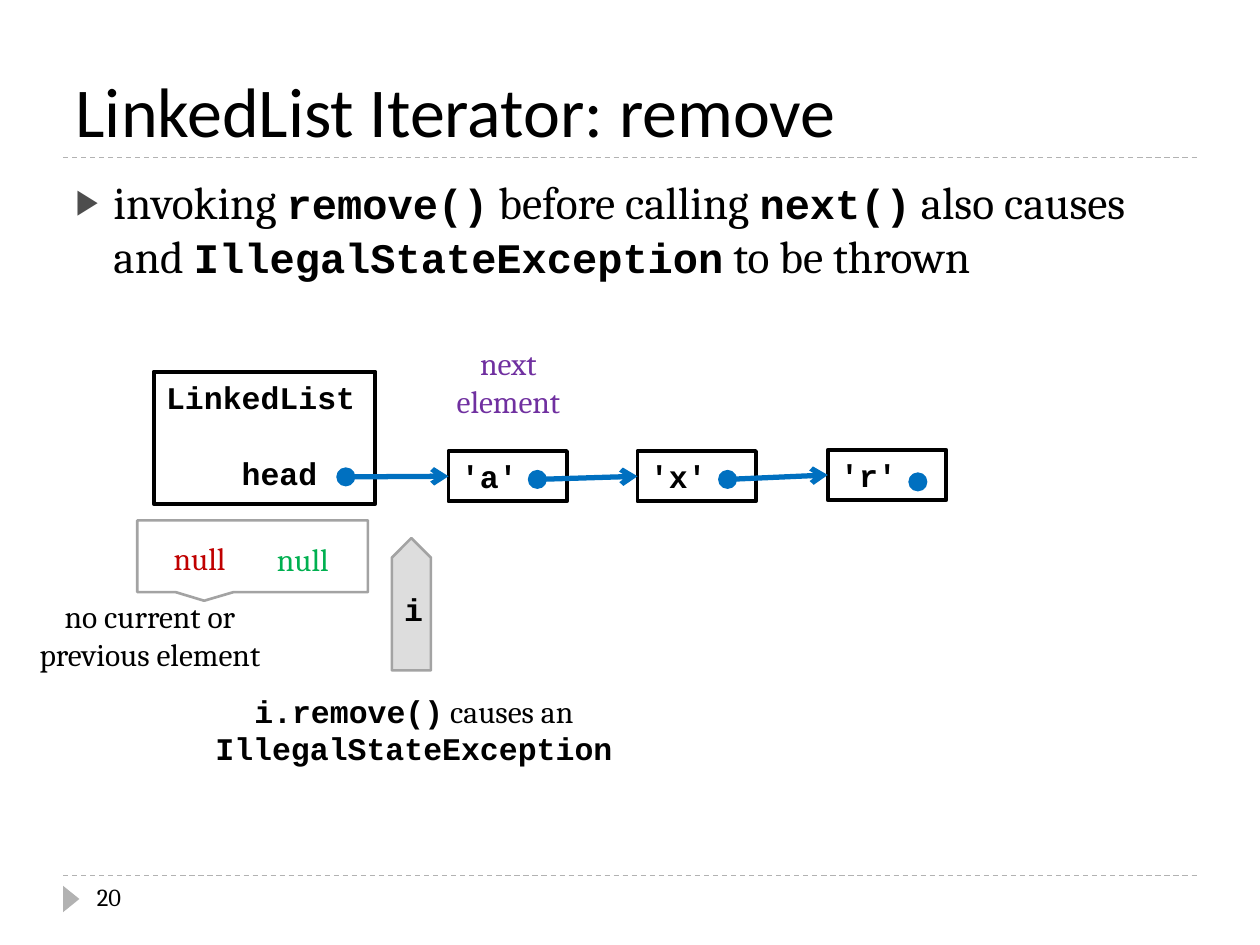
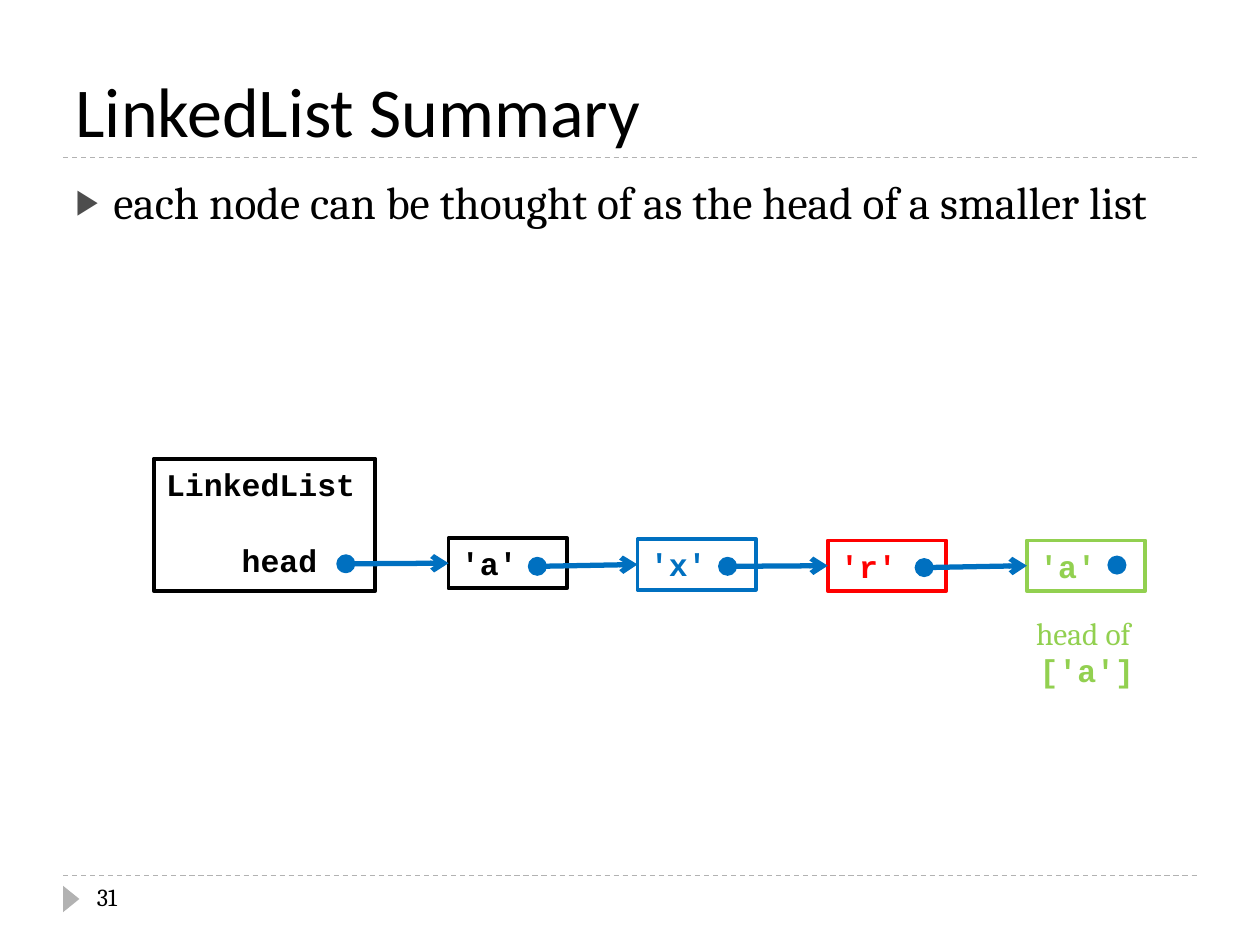
from lxml import etree
from pptx import Presentation
from pptx.dml.color import RGBColor
from pptx.enum.dml import MSO_LINE
from pptx.enum.shapes import MSO_CONNECTOR, MSO_SHAPE
from pptx.enum.text import MSO_ANCHOR, PP_ALIGN
from pptx.oxml.ns import qn
from pptx.util import Inches, Pt

RECT, OVAL, TRIANGLE = MSO_SHAPE.RECTANGLE, MSO_SHAPE.OVAL, MSO_SHAPE.ISOSCELES_TRIANGLE
CALLOUT, POINTER = MSO_SHAPE.RECTANGULAR_CALLOUT, MSO_SHAPE.PENTAGON
STRAIGHT, DASH = MSO_CONNECTOR.STRAIGHT, MSO_LINE.DASH
LEFT, CENTER = PP_ALIGN.LEFT, PP_ALIGN.CENTER
TOP, MIDDLE, BOTTOM = MSO_ANCHOR.TOP, MSO_ANCHOR.MIDDLE, MSO_ANCHOR.BOTTOM

BLACK, WHITE, BLUE, RED, GREEN = "000000", "FFFFFF", "0070C0", "FF0000", "92D050"
RULE, BULLET, EDGE, SHADE = "B2B2B2", "4D4D4D", "A3A3A3", "DDDDDD"

TITLE = {"name": "Calibri", "size": Pt(40), "bold": False}
BODY = {"name": "Cambria", "size": Pt(26), "bold": False}
BODY_CODE = {"name": "Courier New", "size": Pt(24), "bold": True}
NOTE = {"name": "Cambria", "size": Pt(18), "bold": False}
CODE = {"name": "Courier New", "size": Pt(18), "bold": True}
NUMBER = {"name": "Cambria", "size": Pt(14), "bold": False}
DOT = 0.13


def paint(fill, colour):
    if colour is None:
        fill.background()
    else:
        fill.solid()
        fill.fore_color.rgb = RGBColor.from_string(colour)


def write(frame, lines, colour, align=LEFT, anchor=TOP, wrap=True):
    frame.word_wrap = wrap
    frame.vertical_anchor = anchor
    for index, spans in enumerate(lines):
        para = frame.add_paragraph() if index else frame.paragraphs[0]
        para.alignment = align
        for text, style in spans:
            span = para.add_run()
            span.text = text
            for name, value in style.items():
                setattr(span.font, name, value)
            paint(span.font.fill, colour)


pages = [
    {
        "title": "LinkedList Iterator: remove",
        "number": "20",
        "bullet": [
            ("invoking ", BODY), ("remove()", BODY_CODE),
            (" before calling ", BODY), ("next()", BODY_CODE),
            (" also causes and ", BODY), ("IllegalStateException", BODY_CODE),
            (" to be thrown", BODY),
        ],
        "list_top": 2.95,
        "nodes": [
            ("'a'", 3.56, 3.58, BLACK, 4.2, 3.74),
            ("'x'", 5.06, 3.58, BLACK, 5.71, 3.74),
            ("'r'", 6.57, 3.57, BLACK, 7.22, 3.76),
        ],
        "iterator": True,
        "captions": [
            (3.49, 2.68, 1.09, 0.71, "7030A0", CENTER, [[("next", NOTE)], [("element", NOTE)]]),
            (1.6, 5.44, 3.37, 0.71, BLACK, CENTER,
             [[("i.remove()", CODE), (" causes an", NOTE)], [("IllegalStateException", CODE)]]),
            (2.1, 4.24, 0.63, 0.4, "00B050", LEFT, [[("null", NOTE)]]),
            (1.28, 4.23, 0.63, 0.4, "C00000", LEFT, [[("null", NOTE)]]),
            (0.15, 4.69, 2.08, 0.71, BLACK, CENTER,
             [[("no current or", NOTE)], [("previous element", NOTE)]]),
        ],
    },
    {
        "title": "LinkedList Summary",
        "number": "31",
        "bullet": [("each node can be thought of as the head of a smaller list", BODY)],
        "list_top": 3.64,
        "nodes": [
            ("'a'", 3.56, 4.27, BLACK, 4.2, 4.43),
            ("'x'", 5.06, 4.28, BLUE, 5.71, 4.43),
            ("'r'", 6.57, 4.29, RED, 7.27, 4.44),
            ("'a'", 8.15, 4.29, GREEN, 8.8, 4.42),
        ],
        "iterator": False,
        "captions": [
            (8.09, 4.82, 1.07, 0.71, GREEN, CENTER, [[("head of ", NOTE)], [("['a'] ", CODE)]]),
        ],
    },
]

deck = Presentation()
deck.slide_width, deck.slide_height = Inches(10), Inches(7.5)

for content in pages:
    page = deck.slides.add_slide(deck.slide_layouts[1])
    title, body = page.placeholders[0], page.placeholders[1]
    for holder, top, height in ((title, 0.17, 1.08), (body, 1.33, 5.4)):
        holder.left, holder.top = Inches(0.5), Inches(top)
        holder.width, holder.height = Inches(9), Inches(height)
    write(title.text_frame, [[(content["title"], TITLE)]], BLACK, anchor=BOTTOM)
    write(body.text_frame, [content["bullet"]], BLACK)
    para = body.text_frame.paragraphs[0]
    para.space_before = Pt(6)
    props = para._p.get_or_add_pPr()
    props.set("marL", str(Inches(0.3)))
    props.set("indent", str(Inches(-0.3)))
    bullet_colour = etree.SubElement(props, qn("a:buClr"))
    etree.SubElement(bullet_colour, qn("a:srgbClr"), val=BULLET)
    etree.SubElement(props, qn("a:buSzPct"), val="76000")
    etree.SubElement(props, qn("a:buChar"), char="▶")

    list_top = content["list_top"]
    shapes = [(TRIANGLE, 0.46, 7.07, 0.21, DOT, RULE, None, 0, 90, [])]
    if content["iterator"]:
        shapes += [
            (CALLOUT, 1.09, 4.13, 1.83, 0.57, WHITE, EDGE, 1.5, 0, []),
            (POINTER, 2.74, 4.64, 1.05, 0.31, SHADE, EDGE, 1.5, 270, [[("i", CODE)]]),
        ]
    shapes.append((RECT, 1.22, list_top, 1.76, 1.05, None, BLACK, 2.25, 0,
                   [[("LinkedList", CODE)], [("head", CODE)]]))
    dots = [(2.68, list_top + 0.77)]
    for label, left, top, colour, dot_left, dot_top in content["nodes"]:
        shapes.append((RECT, left, top, 0.94, 0.4, None, colour, 2.25, 0, [[(label, CODE)]]))
        dots.append((dot_left, dot_top))
    shapes += [(OVAL, left, top, DOT, DOT, BLUE, BLUE, 1.5, 0, []) for left, top in dots]

    boxes = []
    for kind, left, top, width, height, fill, edge, weight, turn, lines in shapes:
        box = page.shapes.add_shape(kind, Inches(left), Inches(top), Inches(width), Inches(height))
        box.shadow.inherit = False
        box.rotation = turn
        paint(box.fill, fill)
        paint(box.line.fill, edge)
        if edge:
            box.line.width = Pt(weight)
        if kind == CALLOUT:
            box.adjustments[0], box.adjustments[1] = -0.21, 0.62
        elif kind == POINTER:
            write(box.text_frame, lines, BLACK, CENTER, MIDDLE)
            box.text_frame._txBody.bodyPr.set("vert", "vert")
        elif kind == RECT:
            write(box.text_frame, lines, edge)
            boxes.append(box)
    head = boxes[0].text_frame.paragraphs[1]
    head.space_before = Pt(22)
    head._p.get_or_add_pPr().set("marL", str(Inches(0.6)))

    links = [(0.5, y, 9.5, y, RULE, 0.75, None) for y in (1.25, 6.95)]
    for (left, top), node in zip(dots, boxes[1:]):
        x, y = left + DOT / 2, top + DOT / 2
        links.append((x, y, x, y, BLUE, 3, node))
    for x1, y1, x2, y2, colour, weight, node in links:
        link = page.shapes.add_connector(STRAIGHT, Inches(x1), Inches(y1), Inches(x2), Inches(y2))
        paint(link.line.fill, colour)
        link.line.width = Pt(weight)
        props = link._element.spPr
        if node is None:
            link.line.dash_style = DASH
        else:
            link.end_connect(node, 1)
            etree.SubElement(props.find(qn("a:ln")), qn("a:tailEnd"), type="arrow")
        etree.SubElement(props, qn("a:effectLst"))

    number = (0.67, 6.95, 2.17, 0.4, BLACK, LEFT, [[(content["number"], NUMBER)]])
    for left, top, width, height, colour, align, lines in content["captions"] + [number]:
        box = page.shapes.add_textbox(Inches(left), Inches(top), Inches(width), Inches(height))
        write(box.text_frame, lines, colour, align, wrap=False)

deck.save("out.pptx")
